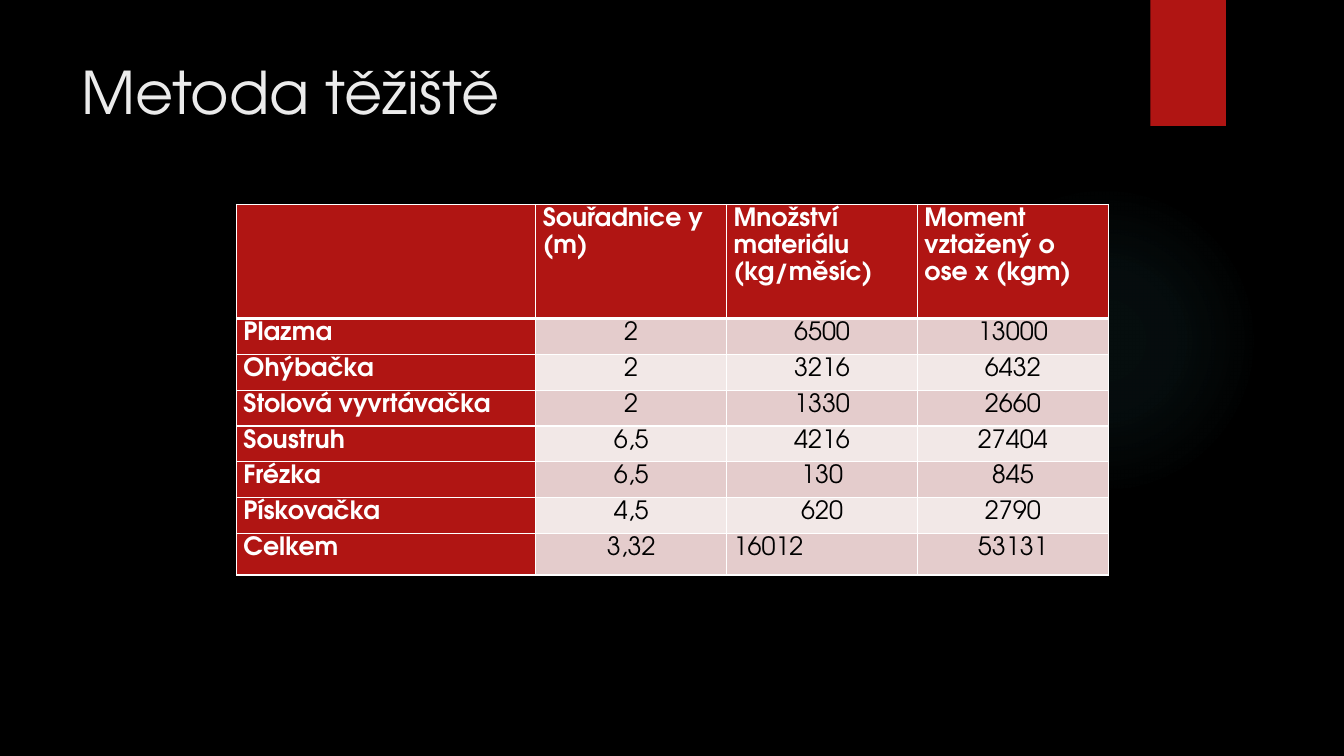
from dataclasses import dataclass

from lxml.etree import SubElement
from pptx import Presentation
from pptx.dml.color import RGBColor
from pptx.enum.shapes import MSO_SHAPE
from pptx.enum.text import MSO_ANCHOR, PP_ALIGN
from pptx.oxml import parse_xml
from pptx.oxml.ns import nsdecls, qn
from pptx.shapes.autoshape import Shape
from pptx.slide import Slide
from pptx.table import _Cell
from pptx.util import Emu, Inches, Pt

# The slide is a grid of 160 columns by 90 rows of square units.
UNIT = Inches(1) // 12
FONT = "TeX Gyre Adventor"
COLORS = {
    "background": "000000",
    "accent": "B01513",
    "glow": "50B9C1",
    "title": "EBEBEB",
    "light": "FFFFFF",
    "dark": "000000",
    "odd": "E4CCCC",
    "even": "F2E8E7",
}


@dataclass(frozen=True)
class Area:
    column: float
    row: float
    columns: float
    rows: float

    def box(self) -> tuple[Emu, Emu, Emu, Emu]:
        return (grid(self.column), grid(self.row),
                grid(self.columns), grid(self.rows))


@dataclass(frozen=True)
class Machine:
    name: str
    y: str
    material: str
    moment: str
    material_align: PP_ALIGN = PP_ALIGN.CENTER


GLOW = Area(112.95, 22, 37, 37)
RIBBON = Area(136.95, 0, 9, 15)
TITLE = Area(8.5, 6, 123.5, 18.4)
TABLE = Area(28.15, 24.35, 103.8, 44.14)
COLUMN_WIDTHS = [35.64] + [22.72] * 3
ROW_HEIGHTS = [13.56] + [4.27] * 6 + [4.96]
HEADINGS = ["", "Souřadnice y (m)", "Množství materiálu (kg/měsíc)",
            "Moment vztažený o ose x (kgm)"]
MACHINES = [
    Machine("Plazma", "2", "6500", "13000"),
    Machine("Ohýbačka", "2", "3216", "6432"),
    Machine("Stolová vyvrtávačka", "2", "1330", "2660"),
    Machine("Soustruh", "6,5", "4216", "27404"),
    Machine("Frézka", "6,5", "130", "845"),
    Machine("Pískovačka", "4,5", "620", "2790"),
    Machine("Celkem", "3,32", "16012", "53131", PP_ALIGN.LEFT),
]


def grid(units: float) -> Emu:
    return Emu(round(units * UNIT))


def color(name: str) -> RGBColor:
    return RGBColor.from_string(COLORS[name])


def add_plain_shape(slide: Slide, kind: MSO_SHAPE, area: Area) -> Shape:
    shape = slide.shapes.add_shape(kind, *area.box())
    shape.shadow.inherit = False
    shape.line.fill.background()
    return shape


def add_glow(slide: Slide) -> None:
    glow = add_plain_shape(slide, MSO_SHAPE.OVAL, GLOW)
    stops = "".join(
        f'<a:gs pos="{place * 1000}"><a:srgbClr val="{COLORS["glow"]}">'
        f'<a:alpha val="{opacity * 1000}"/></a:srgbClr></a:gs>'
        for place, opacity in [(0, 7), (36, 6), (69, 0)])
    gradient = parse_xml(
        f'<a:gradFill {nsdecls("a")}><a:gsLst>{stops}</a:gsLst>'
        '<a:path path="circle"><a:fillToRect l="50000" t="50000" '
        'r="50000" b="50000"/></a:path></a:gradFill>')
    glow._element.spPr.find(qn("a:prstGeom")).addnext(gradient)


def add_ribbon(slide: Slide) -> None:
    ribbon = add_plain_shape(slide, MSO_SHAPE.RECTANGLE, RIBBON)
    ribbon.fill.solid()
    ribbon.fill.fore_color.rgb = color("accent")
    effects = ribbon._element.spPr.find(qn("a:effectLst"))
    effects.append(parse_xml(
        f'<a:outerShdw {nsdecls("a")} blurRad="{Pt(3)}" dist="{Pt(2)}" '
        'dir="5400000" rotWithShape="0"><a:srgbClr val="000000">'
        '<a:alpha val="45000"/></a:srgbClr></a:outerShdw>'))


def add_title(slide: Slide) -> None:
    frame = slide.shapes.add_textbox(*TITLE.box()).text_frame
    frame.word_wrap = True
    frame.vertical_anchor = MSO_ANCHOR.TOP
    heading = frame.paragraphs[0]
    heading.text = "Metoda těžiště"
    heading.font.name = FONT
    heading.font.size = Pt(42)
    heading.font.color.rgb = color("title")


def set_borders(cell: _Cell, top: float, bottom: float) -> None:
    properties = cell._tc.get_or_add_tcPr()
    for side, width in {"L": 1, "R": 1, "T": top, "B": bottom}.items():
        border = SubElement(properties, qn(f"a:ln{side}"), w=str(Pt(width)))
        fill = SubElement(border, qn("a:solidFill"))
        SubElement(fill, qn("a:srgbClr"), val=COLORS["light"])


def fill_cell(cell: _Cell, text: str, fill: str, align: PP_ALIGN,
              emphasized: bool) -> None:
    cell.fill.solid()
    cell.fill.fore_color.rgb = color(fill)
    cell.margin_left = cell.margin_right = Inches(0.07)
    cell.margin_top = cell.margin_bottom = 0
    paragraph = cell.text_frame.paragraphs[0]
    paragraph.text = text
    paragraph.alignment = align
    paragraph.line_spacing = 1.15
    paragraph.font.name = FONT
    paragraph.font.size = Pt(18)
    paragraph.font.bold = emphasized
    paragraph.font.color.rgb = color("light" if emphasized else "dark")


def add_moment_table(slide: Slide) -> None:
    table = slide.shapes.add_table(
        len(ROW_HEIGHTS), len(COLUMN_WIDTHS), *TABLE.box()).table
    table.first_row = table.horz_banding = False
    for column, width in zip(table.columns, COLUMN_WIDTHS):
        column.width = grid(width)
    for row, height in zip(table.rows, ROW_HEIGHTS):
        row.height = grid(height)

    left, center = PP_ALIGN.LEFT, PP_ALIGN.CENTER
    lines = [(HEADINGS, [left] * 4)]
    lines += [([m.name, m.y, m.material, m.moment],
               [left, center, m.material_align, center]) for m in MACHINES]
    for r, (texts, aligns) in enumerate(lines):
        for c, (text, align) in enumerate(zip(texts, aligns)):
            cell = table.cell(r, c)
            emphasized = r == 0 or c == 0
            band = "odd" if r % 2 else "even"
            set_borders(cell, top=3 if r == 1 else 1, bottom=3 if r == 0 else 1)
            fill_cell(cell, text, "accent" if emphasized else band,
                      align, emphasized)


def main() -> None:
    presentation = Presentation()
    presentation.slide_width = grid(160)
    presentation.slide_height = grid(90)
    slide = presentation.slides.add_slide(presentation.slide_layouts[6])
    slide.background.fill.solid()
    slide.background.fill.fore_color.rgb = color("background")
    add_glow(slide)
    add_ribbon(slide)
    add_title(slide)
    add_moment_table(slide)
    presentation.save("out.pptx")


if __name__ == "__main__":
    main()
